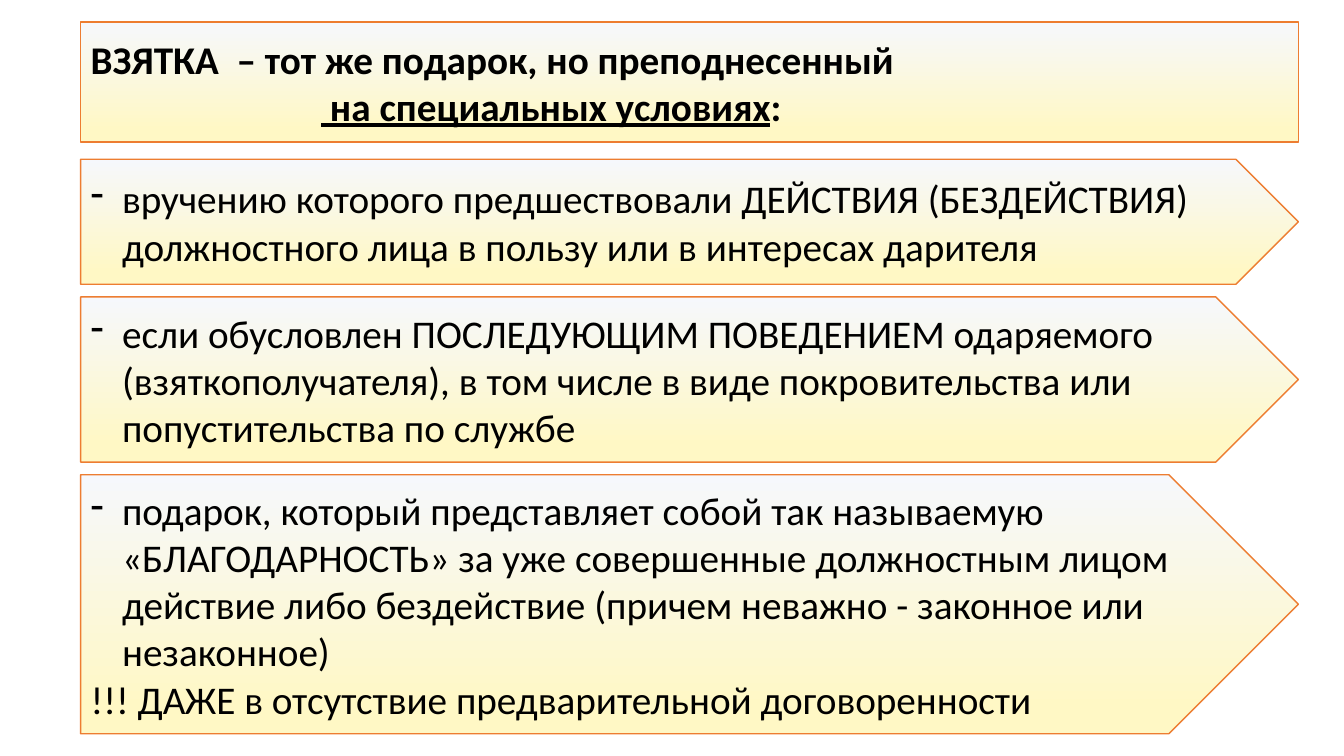
from lxml import etree
from pptx import Presentation
from pptx import util as u
from pptx.dml import color
from pptx.enum import shapes, text
from pptx.oxml import ns

# Content
TITLE = [
    [("ВЗЯТКА  – тот же подарок, но преподнесенный", False)],
    [(" на специальных условиях", True), (":", False)],
]
# Each arrow: height, then (line, bulleted)
ARROWS = [
    (89.3, [("вручению которого предшествовали ДЕЙСТВИЯ (БЕЗДЕЙСТВИЯ) "
             "должностного лица в пользу или в интересах дарителя", True)]),
    (118, [("если обусловлен ПОСЛЕДУЮЩИМ ПОВЕДЕНИЕМ одаряемого "
            "(взяткополучателя), в том числе в виде покровительства или "
            "попустительства по службе", True)]),
    (185, [("подарок, который представляет собой так называемую "
            "«БЛАГОДАРНОСТЬ» за уже совершенные должностным лицом действие "
            "либо бездействие (причем неважно - законное или незаконное)", True),
           ("!!! ДАЖЕ в отсутствие предварительной договоренности", False)]),
]
LEFT, WIDTH, GAP = 57.6, 869.8, 9
HEAD_TOP, HEAD_HIGH, FIRST_TOP = 15.8, 85.7, 113.8
INDENT, SHIFT = 22.5, 164.6


def rgb(code):
    return color.RGBColor.from_string(code)


def place(shape, top, high):
    shape.left, shape.top = u.Pt(LEFT), u.Pt(top)
    shape.width, shape.height = u.Pt(WIDTH), u.Pt(high)


def style(shape):
    """Gradient fill, orange outline and a wrapped, centred text frame."""
    shape.fill.gradient()
    shape.fill.gradient_angle = 270
    for stop, (spot, code) in zip(shape.fill.gradient_stops,
                                  [(0, "F6F8FC"), (0.9, "FFF8C5")]):
        stop.position, stop.color.rgb = spot, rgb(code)
    shape.line.color.rgb = rgb("ED7D31")
    shape.line.width = u.Pt(1)
    frame = shape.text_frame
    frame.word_wrap = True
    frame.auto_size = text.MSO_AUTO_SIZE.NONE
    frame.vertical_anchor = text.MSO_ANCHOR.MIDDLE
    return frame


def add_para(frame, first):
    para = frame.paragraphs[0] if first else frame.add_paragraph()
    para.alignment = text.PP_ALIGN.LEFT
    para.line_spacing = 1.0
    para.space_before = u.Pt(0)
    return para


def add_run(para, words, bold=False, under=False):
    run = para.add_run()
    run.text = words
    font = run.font
    font.name, font.size = "Calibri", u.Pt(28)
    font.bold, font.underline = bold, under
    font.color.rgb = rgb("000000")


def indent(para, left, hang=0):
    props = para._p.get_or_add_pPr()
    props.set("marL", str(u.Pt(left)))
    props.set("indent", str(u.Pt(-hang)))
    return props


deck = Presentation()
deck.slide_width, deck.slide_height = u.Pt(960), u.Pt(540)
slide = deck.slides.add_slide(deck.slide_layouts[5])

# Heading: the title placeholder as a rounded box
head = slide.shapes.title
place(head, HEAD_TOP, HEAD_HIGH)
geom = etree.SubElement(head._element.spPr, ns.qn("a:prstGeom"), prst="roundRect")
etree.SubElement(geom, ns.qn("a:avLst"))
frame = style(head)
for row, runs in enumerate(TITLE):
    para = add_para(frame, row == 0)
    indent(para, SHIFT * row)
    for words, under in runs:
        add_run(para, words, True, under)

# Arrows stacked downwards
top = FIRST_TOP
for high, lines in ARROWS:
    arrow = slide.shapes.add_shape(shapes.MSO_SHAPE.PENTAGON, 0, 0, 0, 0)
    place(arrow, top, high)
    arrow.shadow.inherit = False
    frame = style(arrow)
    for row, (words, dash) in enumerate(lines):
        para = add_para(frame, row == 0)
        if dash:
            props = indent(para, INDENT, INDENT)
            etree.SubElement(props, ns.qn("a:buChar"), char="-")
        add_run(para, words)
    top += high + GAP

deck.save("out.pptx")
